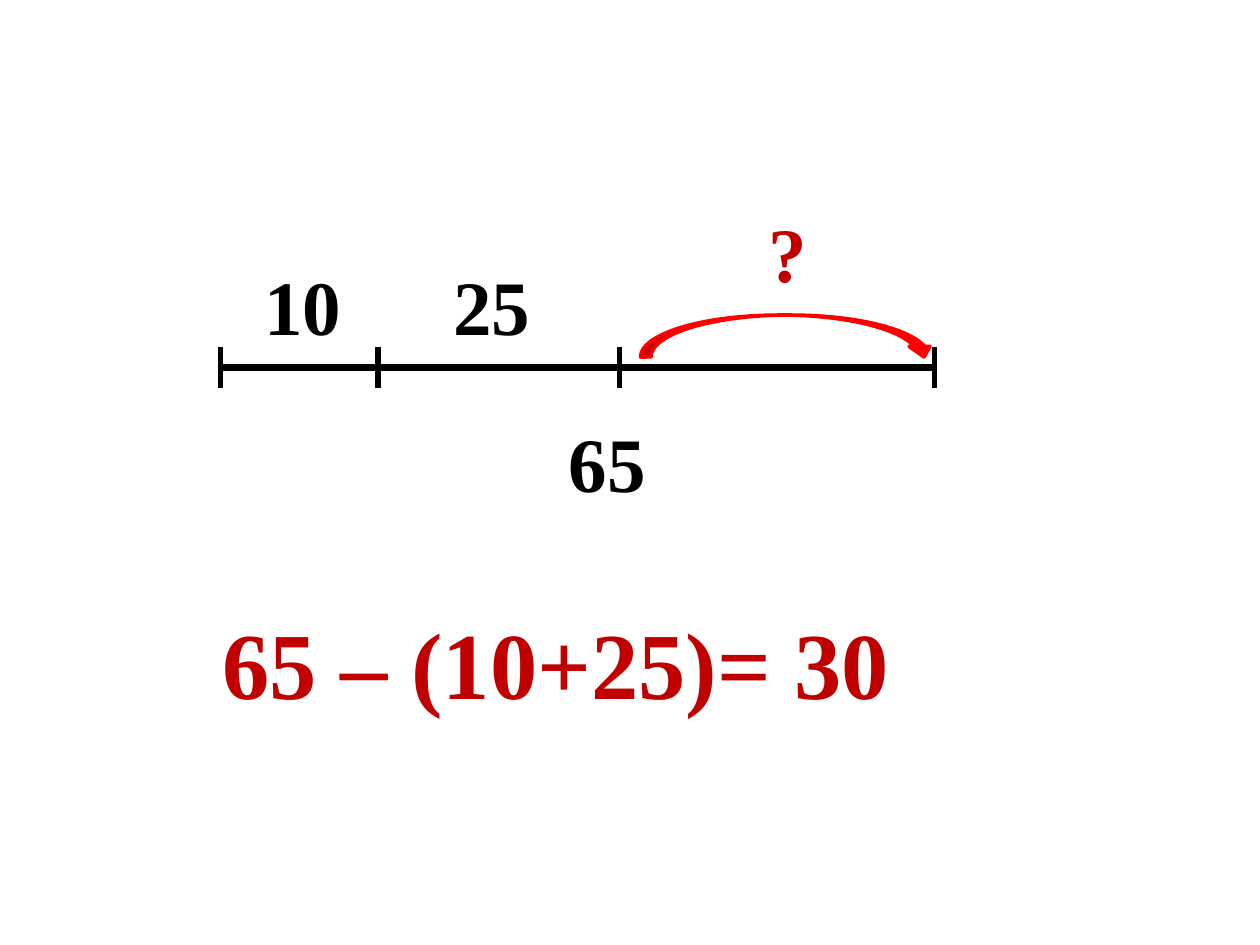
from typing import NamedTuple

from lxml import etree
from pptx import Presentation
from pptx import util as u
from pptx.dml.color import RGBColor
from pptx.enum import shapes, text
from pptx.oxml.ns import qn
from pptx.slide import Slide

BLACK = RGBColor(0x00, 0x00, 0x00)
RED = RGBColor(0xFF, 0x00, 0x00)
DARK = RGBColor(0xC0, 0x00, 0x00)
FONT = "Times New Roman"
SCALE = 9525

AXIS = 280
HALF = 16
TICKS = (168, 288, 472, 712)


class Label(NamedTuple):
    words: str
    x: int
    y: int
    w: int
    h: int = 81
    size: int = 44
    color: RGBColor = BLACK
    wrap: bool = True


LABELS = (
    Label("65", 424, 312, 112),
    Label("10", 192, 192, 112),
    Label("25", 336, 192, 96),
    Label("?", 576, 152, 112, color=DARK),
    Label("65 – (10+25)= 30", 160, 456, 533, 97, 54, DARK, False),
)


def px(n: int) -> u.Emu:
    return u.Emu(n * SCALE)


def add_line(slide: Slide, x1: int, y1: int, x2: int, y2: int, width: float) -> None:
    line = slide.shapes.add_connector(
        shapes.MSO_CONNECTOR.STRAIGHT, px(x1), px(y1), px(x2), px(y2)
    )
    line.line.color.rgb = BLACK
    line.line.width = u.Pt(width)
    etree.SubElement(line._element.spPr, qn("a:effectLst"))


def add_label(slide: Slide, label: Label) -> None:
    box = slide.shapes.add_textbox(px(label.x), px(label.y), px(label.w), px(label.h))
    frame = box.text_frame
    frame.word_wrap = label.wrap
    frame.auto_size = text.MSO_AUTO_SIZE.SHAPE_TO_FIT_TEXT
    frame.text = label.words
    font = frame.paragraphs[0].runs[0].font
    font.name = FONT
    font.size = u.Pt(label.size)
    font.bold = True
    font.color.rgb = label.color


def add_arc(slide: Slide, x: int, y: int, w: int, h: int) -> None:
    arc = slide.shapes.add_shape(
        shapes.MSO_SHAPE.CURVED_DOWN_ARROW, px(x), px(y), px(w), px(h)
    )
    arc.shadow.inherit = False
    arc.fill.solid()
    arc.fill.fore_color.rgb = RED
    arc.line.color.rgb = RED
    arc.line.width = u.Pt(2)


def main() -> None:
    deck = Presentation()
    deck.slide_width, deck.slide_height = px(960), px(720)
    slide = deck.slides.add_slide(deck.slide_layouts[6])
    add_line(slide, TICKS[0], AXIS, TICKS[-1], AXIS, 4.5)
    for x in TICKS:
        add_line(slide, x, AXIS - HALF, x, AXIS + HALF, 3)
    add_arc(slide, 488, 240, 224, 32)
    for label in LABELS:
        add_label(slide, label)
    deck.save("out.pptx")


if __name__ == "__main__":
    main()
